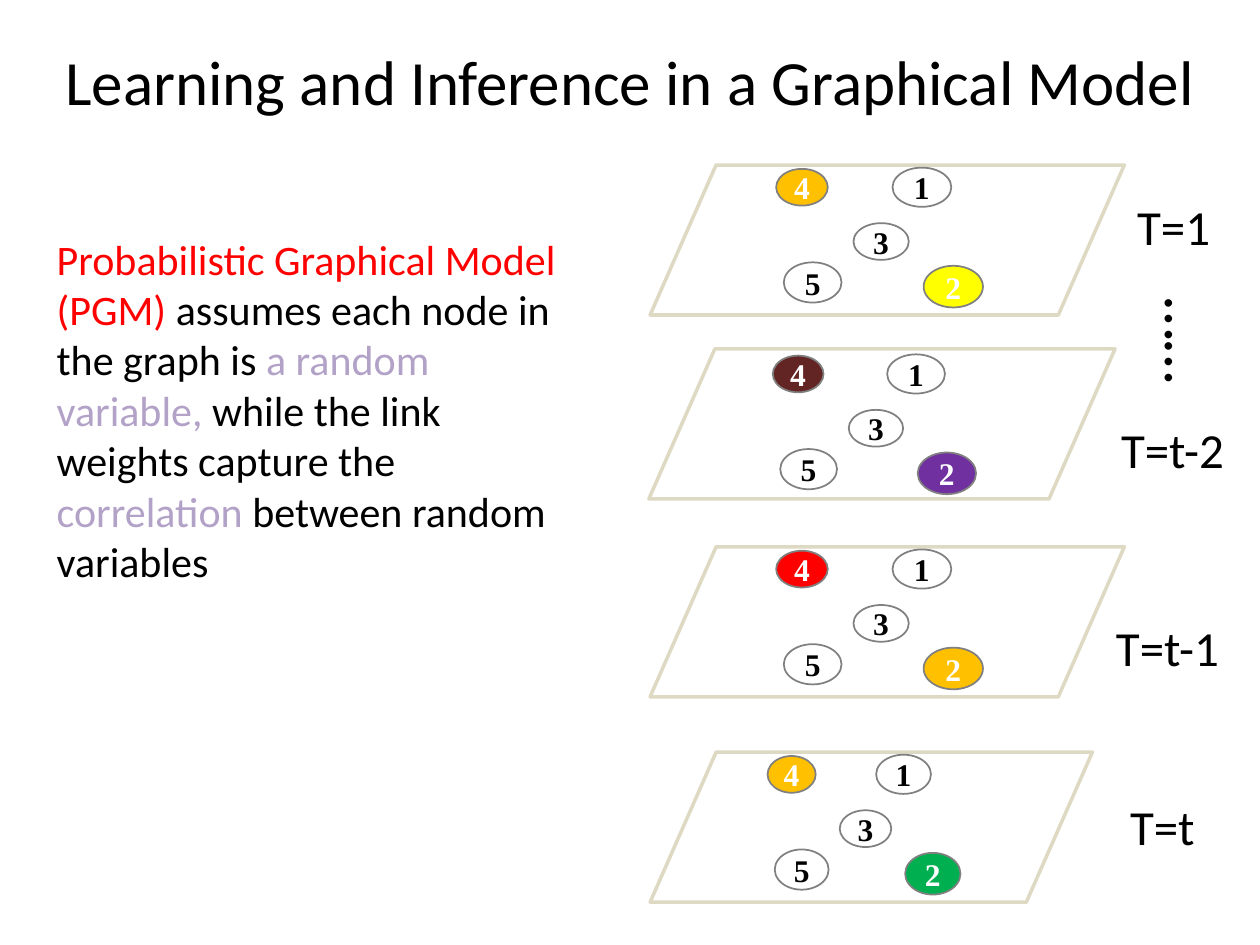
from dataclasses import dataclass

from pptx import Presentation
from pptx.dml.color import RGBColor
from pptx.enum.shapes import MSO_SHAPE
from pptx.enum.text import MSO_ANCHOR, MSO_AUTO_SIZE, PP_ALIGN
from pptx.oxml.ns import qn
from pptx.util import Pt

LEFT, CENTER = PP_ALIGN.LEFT, PP_ALIGN.CENTER
TOP, MIDDLE = MSO_ANCHOR.TOP, MSO_ANCHOR.MIDDLE
FIXED = MSO_AUTO_SIZE.NONE
OVAL, PLANE = MSO_SHAPE.OVAL, MSO_SHAPE.PARALLELOGRAM


@dataclass(frozen=True)
class Theme:
    sans: str = "Calibri"
    serif: str = "Times New Roman"
    black: str = "000000"
    white: str = "FFFFFF"
    red: str = "FF0000"
    lilac: str = "B3A2C7"
    amber: str = "FFC000"
    yellow: str = "FFFF00"
    brown: str = "632523"
    purple: str = "7030A0"
    green: str = "00B050"
    edge: str = "DDD9C3"
    ring: str = "808080"
    title: int = 36
    label: int = 28
    body: int = 24
    node: int = 18


THEME = Theme()

# Node name: left, top, width, height within a plane of full width
NODES = {
    "1": (138.5, 1.5, 33.6, 22.4),
    "3": (116.2, 33.2, 31.6, 21),
    "4": (72, 2.2, 29.5, 21),
    "5": (76.4, 55.6, 33, 23),
    "2": (156.3, 57.6, 33.9, 23.8),
}
FULL = 271
HEIGHT = 85.7

# Left, top, width, drop of the nodes, colours of nodes 4 and 2
PLANES = [
    (371.5, 312.5, FULL, 0, THEME.red, THEME.amber),
    (371.5, 429.8, 252.7, 0, THEME.amber, THEME.green),
    (370.8, 199.4, 266.4, 1.6, THEME.brown, THEME.purple),
    (371.5, 94.3, FULL, 0, THEME.amber, THEME.yellow),
]
LABELS = [
    ("T=1", 630, 108.7),
    ("T=t-2", 629.3, 236.2),
    ("T=t-1", 626.4, 349.2),
    ("T=t", 623.5, 451.4),
]
STORY = [
    ("Probabilistic Graphical Model (PGM) ", THEME.red),
    ("assumes each node in the graph is ", THEME.black),
    ("a random variable, ", THEME.lilac),
    ("while the link weights capture the ", THEME.black),
    ("correlation ", THEME.lilac),
    ("between random variables", THEME.black),
]


def rgb(code):
    return RGBColor.from_string(code)


def write(frame, text, size, color=THEME.black, font=THEME.sans, bold=False,
          align=CENTER, anchor=TOP, wrap=True):
    """Fill a frame with one paragraph; text is a string or (text, colour) pairs."""
    frame.word_wrap = wrap
    frame.auto_size = FIXED
    frame.vertical_anchor = anchor
    para = frame.paragraphs[0]
    para.alignment = align
    para.space_before = Pt(0)
    for part, tint in [(text, color)] if isinstance(text, str) else text:
        run = para.add_run()
        run.text = part
        run.font.name = font
        run.font.size = Pt(size)
        run.font.bold = bold
        run.font.color.rgb = rgb(tint)
    return para


class Deck:
    """Holds the theme and the slide being drawn."""

    def __init__(self, theme):
        self.theme = theme
        self.file = Presentation()
        self.file.slide_width, self.file.slide_height = Pt(720), Pt(540)
        self.slide = self.file.slides.add_slide(self.file.slide_layouts[1])

    def place(self, shape, box):
        shape.left, shape.top, shape.width, shape.height = map(Pt, box)

    def title(self, text, box):
        shape = self.slide.shapes.title
        self.place(shape, box)
        write(shape.text_frame, text, self.theme.title, anchor=MIDDLE)

    def body(self, parts, box):
        shape = self.slide.placeholders[1]
        self.place(shape, box)
        para = write(shape.text_frame, parts, self.theme.body, align=LEFT)
        props = para._p.get_or_add_pPr()
        props.set("marL", "0")
        props.set("indent", "0")
        props.append(props.makeelement(qn("a:buNone"), {}))

    def label(self, text, box, size, align=CENTER, turn=0):
        shape = self.slide.shapes.add_textbox(*map(Pt, box))
        shape.rotation = turn
        write(shape.text_frame, text, size, align=align)

    def shape(self, group, kind, box, fill, line, width):
        shape = group.shapes.add_shape(kind, *map(Pt, box))
        shape.shadow.inherit = False
        shape.fill.solid()
        shape.fill.fore_color.rgb = rgb(fill)
        shape.line.color.rgb = rgb(line)
        shape.line.width = Pt(width)
        return shape

    def node(self, group, name, box, fill):
        theme = self.theme
        shape = self.shape(group, OVAL, box, fill or theme.white, theme.ring, 1)
        frame = shape.text_frame
        frame.margin_left = frame.margin_right = 0
        frame.margin_top = frame.margin_bottom = 0
        write(frame, name, theme.node, theme.white if fill else theme.black,
              theme.serif, bold=True, anchor=MIDDLE, wrap=False)

    def plane(self, left, top, width, drop, four, two):
        """Draw one time step: a plane with its five nodes, scaled to its width."""
        theme = self.theme
        group = self.slide.shapes.add_group_shape()
        sheet = self.shape(group, PLANE, (left, top, width, HEIGHT),
                           theme.white, theme.edge, 2)
        sheet.adjustments[0] = 0.44
        fills = {"4": four, "2": two}
        scale = width / FULL
        for name, (x, y, w, h) in NODES.items():
            box = (left + x * scale, top + y + drop, w * scale, h)
            self.node(group, name, box, fills.get(name))


def main():
    deck = Deck(THEME)
    deck.title("Learning and Inference in a Graphical Model", (0, 9.4, 720, 73.4))
    for plane in PLANES:
        deck.plane(*plane)
    for text, left, top in LABELS:
        deck.label(text, (left, top, 81.4, 41), THEME.label)
    deck.label("……", (640.8, 176.4, 78.5, 51), THEME.title, align=LEFT, turn=90)
    deck.body(STORY, (25.2, 129.6, 306, 211))
    deck.file.save("out.pptx")


if __name__ == "__main__":
    main()
